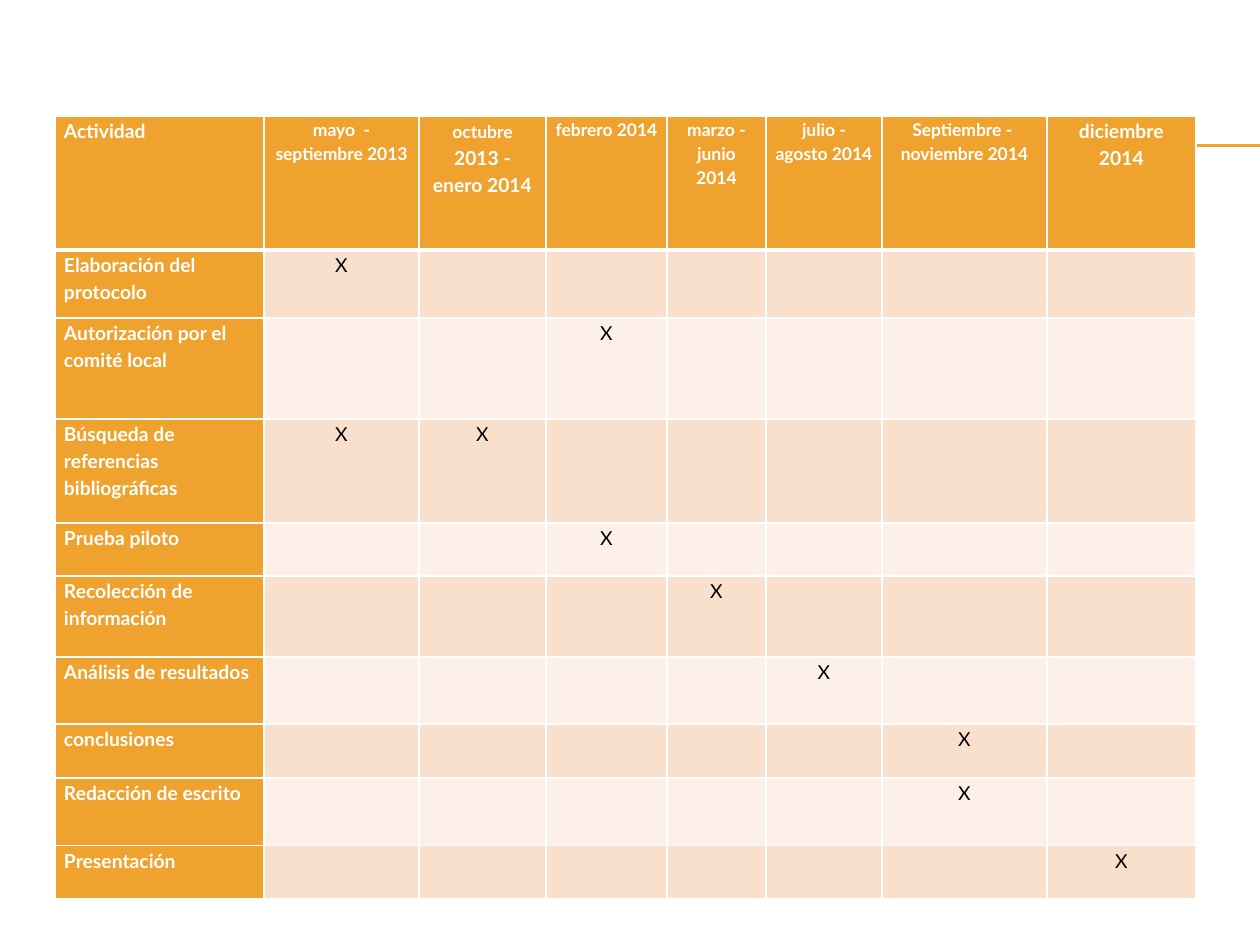
from dataclasses import dataclass
from itertools import accumulate

from lxml.etree import SubElement, fromstring
from pptx import Presentation
from pptx.dml.color import RGBColor as RGB
from pptx.enum.shapes import MSO_CONNECTOR as Connector
from pptx.enum.text import PP_ALIGN as Align
from pptx.oxml.ns import nsdecls, qn
from pptx.util import Emu, Pt

EMU_PER_INCH = 914400
PX_PER_INCH = 126


@dataclass(frozen=True)
class Theme:
    font: str = "Lato"
    accent: str = "F0A22E"
    bands: tuple = ("F9E0CD", "FCF0E8")
    light: str = "FFFFFF"
    dark: str = "000000"
    body: int = 11
    small: int = 10
    line: float = 0.75
    border: int = 1
    heavy: int = 3


T = Theme()

COLS = [209, 155, 127, 121, 99, 116, 165, 149]
HEADER_H = 134
HEADERS = [
    [("Actividad", T.body)],
    [("mayo  - septiembre 2013", T.small)],
    [("octubre", T.small), (" 2013 - enero 2014", T.body)],
    [("febrero 2014", T.small)],
    [("marzo - junio 2014", T.small)],
    [("julio - agosto 2014", T.small)],
    [("Septiembre -  noviembre 2014", T.small)],
    [("diciembre 2014", T.body)],
]
ACTIVITIES = [
    ("Elaboración del protocolo", 68, {1}),
    ("Autorización por el comité local", 101, {3}),
    ("Búsqueda de referencias bibliográficas", 104, {1, 2}),
    ("Prueba piloto", 53, {3}),
    ("Recolección de información", 81, {4}),
    ("Análisis de resultados", 67, {5}),
    ("conclusiones", 54, {6}),
    ("Redacción de escrito", 68, {6}),
    ("Presentación", 53, {7}),
]


def px(n):
    return Emu(round(n * EMU_PER_INCH / PX_PER_INCH))


def write(p, text, size=T.body, color=T.light, bold=True, align=Align.LEFT):
    p.alignment = align
    p.line_spacing = 1.15
    r = p.add_run()
    r.text = text
    r.font.name = T.font
    r.font.size = Pt(size)
    r.font.bold = bold
    r.font.color.rgb = RGB.from_string(color)


def set_borders(cell, **widths):
    tc_pr = cell._tc.get_or_add_tcPr()
    for i, side in enumerate("LRTB"):
        width = Pt(widths.get(side, T.border))
        ln = fromstring(f'<a:ln{side} {nsdecls("a")} w="{width}"/>')
        fill = SubElement(ln, qn("a:solidFill"))
        SubElement(fill, qn("a:srgbClr"), val=T.light)
        tc_pr.insert(i, ln)


def style_cell(cell, color, **widths):
    cell.margin_left = cell.margin_right = px(9)
    cell.margin_top = cell.margin_bottom = 0
    cell.fill.solid()
    cell.fill.fore_color.rgb = RGB.from_string(color)
    set_borders(cell, **widths)


def add_rules(s, x, y, w):
    for offset in (0, 1):
        line = s.shapes.add_connector(
            Connector.STRAIGHT, px(x), px(y + offset), px(x + w), px(y + offset))
        line.line.color.rgb = RGB.from_string(T.accent)
        line.line.width = Pt(T.line)
        SubElement(line._element.spPr, qn("a:effectLst"))


def add_schedule(s, x, y):
    heights = [HEADER_H] + [h for _, h, _ in ACTIVITIES]
    table = s.shapes.add_table(len(heights), len(COLS), px(x), px(y),
                               px(sum(COLS)), px(sum(heights))).table
    table.horz_banding = False
    for tracks, sizes, attr in ((table.columns, COLS, "width"),
                                (table.rows, heights, "height")):
        edges = [px(n) for n in accumulate(sizes, initial=0)]
        for track, start, end in zip(tracks, edges, edges[1:]):
            setattr(track, attr, Emu(end - start))

    for col, runs in enumerate(HEADERS):
        cell = table.cell(0, col)
        style_cell(cell, T.accent, B=T.heavy)
        for text, size in runs:
            write(cell.text_frame.paragraphs[0], text, size=size,
                  align=Align.CENTER if col else Align.LEFT)

    for row, (name, _, marks) in enumerate(ACTIVITIES, 1):
        top = T.heavy if row == 1 else T.border
        for col in range(len(COLS)):
            cell = table.cell(row, col)
            p = cell.text_frame.paragraphs[0]
            style_cell(cell, T.bands[(row - 1) % 2] if col else T.accent, T=top)
            if col == 0:
                write(p, name)
            elif col in marks:
                write(p, "X", color=T.dark, bold=False, align=Align.CENTER)
            else:
                p.font.size = Pt(T.body)


def main():
    prs = Presentation()
    prs.slide_width, prs.slide_height = px(1260), px(945)
    s = prs.slides.add_slide(prs.slide_layouts[6])
    add_rules(s, 71, 145, 1189)
    add_schedule(s, 55, 116)
    prs.save("out.pptx")


if __name__ == "__main__":
    main()
